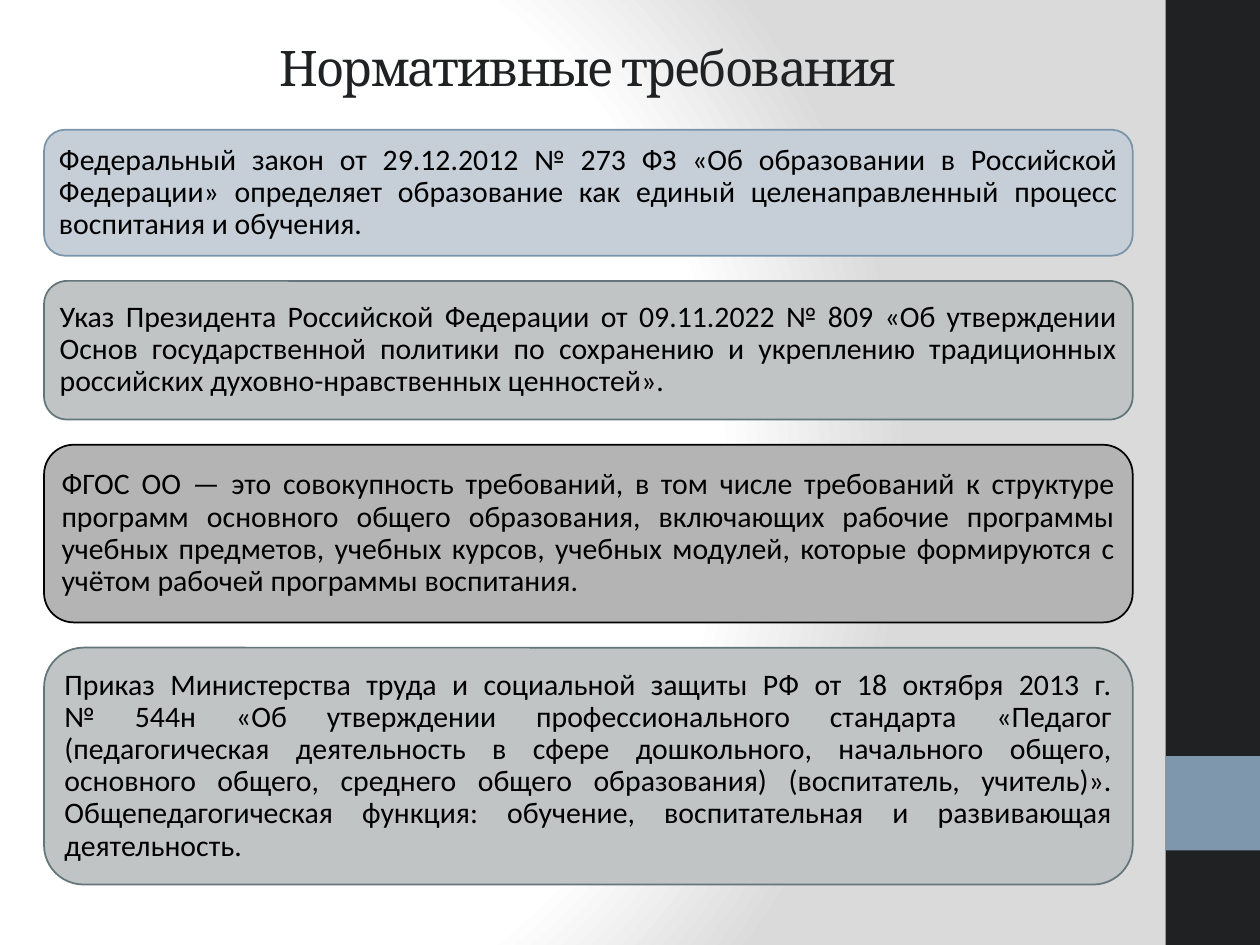
from dataclasses import dataclass

from lxml import etree
from pptx import Presentation
from pptx.dml.color import RGBColor
from pptx.enum.shapes import MSO_SHAPE
from pptx.enum.text import MSO_ANCHOR, PP_ALIGN
from pptx.oxml.ns import qn
from pptx.util import Inches, Pt

RECT, ROUND = MSO_SHAPE.RECTANGLE, MSO_SHAPE.ROUNDED_RECTANGLE
MIDDLE = MSO_ANCHOR.MIDDLE
CENTER, JUSTIFY = PP_ALIGN.CENTER, PP_ALIGN.JUSTIFY


@dataclass(frozen=True)
class Theme:
    dark: str = "1F2123"
    accent: str = "7E97AD"
    black: str = "000000"
    blue: tuple = ("C6CED7", "7A94AA")
    green: tuple = ("C0C4C5", "647679")
    gray: tuple = ("B4B4B4", "000000")
    glow: tuple = ((0, "FFFFFF"), (75, "FFFFFF"), (100, "DADADA"))
    head: str = "Cambria"
    body: str = "Calibri"
    head_size: int = 28
    body_size: int = 17


THEME = Theme()

RULES = [
    (1, THEME.blue,
     "Федеральный закон от 29.12.2012 № 273 ФЗ «Об образовании в Российской "
     "Федерации» определяет образование как единый целенаправленный процесс "
     "воспитания и обучения."),
    (1.1, THEME.green,
     "Указ Президента Российской Федерации от 09.11.2022 № 809 «Об утверждении "
     "Основ государственной политики по сохранению и укреплению традиционных "
     "российских духовно-нравственных ценностей»."),
    (1.41, THEME.gray,
     "ФГОС ОО — это совокупность требований, в том числе требований к структуре "
     "программ основного общего образования, включающих рабочие программы "
     "учебных предметов, учебных курсов, учебных модулей, которые формируются с "
     "учётом рабочей программы воспитания."),
    (1.88, THEME.green,
     "Приказ Министерства труда и социальной защиты РФ от 18 октября 2013 г.\v"
     "№ 544н «Об утверждении профессионального стандарта «Педагог "
     "(педагогическая деятельность в сфере дошкольного, начального общего, "
     "основного общего, среднего общего образования) (воспитатель, учитель)». "
     "Общепедагогическая функция: обучение, воспитательная и развивающая "
     "деятельность."),
]


def write(shape, text, *, font, size, color, align, inset, lead=1, track=0):
    """Fill a shape with one paragraph; track is letter spacing in points."""
    frame = shape.text_frame
    frame.word_wrap = True
    frame.vertical_anchor = MIDDLE
    frame.margin_left = frame.margin_right = Inches(inset)
    frame.margin_top = frame.margin_bottom = Inches(inset)
    para = frame.paragraphs[0]
    para.text = text
    para.alignment = align
    para.line_spacing = lead
    for run in para.runs:
        run.font.name = font
        run.font.size = Pt(size)
        run.font.color.rgb = RGBColor.from_string(color)
        if track:
            run.font._element.set("spc", str(track * 100))


def add_box(slide, kind, box, fill, line=None):
    shape = slide.shapes.add_shape(kind, *map(Inches, box))
    shape.shadow.inherit = False
    shape.fill.solid()
    shape.fill.fore_color.rgb = RGBColor.from_string(fill)
    if line:
        shape.line.color.rgb = RGBColor.from_string(line)
        shape.line.width = Pt(1)
    else:
        shape.line.fill.background()
    return shape


def add_glow(slide):
    """Give the background a radial gradient."""
    slide.background.fill.gradient()
    grad = slide.element.find(".//" + qn("a:gradFill"))
    for child in list(grad):
        grad.remove(child)
    stops = etree.SubElement(grad, qn("a:gsLst"))
    for pos, color in THEME.glow:
        stop = etree.SubElement(stops, qn("a:gs"), pos=str(pos * 1000))
        etree.SubElement(stop, qn("a:srgbClr"), val=color)
    ring = etree.SubElement(grad, qn("a:path"), path="circle")
    etree.SubElement(ring, qn("a:fillToRect"),
                     l="20000", t="50000", r="100000", b="50000")


def add_side(slide, box):
    left, top, width, height = box
    add_box(slide, RECT, box, THEME.dark)
    add_box(slide, RECT, (left, top + 0.8 * height, width, width), THEME.accent)


def add_title(slide, box, text):
    shape = slide.shapes.add_textbox(*map(Inches, box))
    write(shape, text, font=THEME.head, size=THEME.head_size,
          color=THEME.dark, align=CENTER, inset=0, track=-1)


def add_rules(slide, box, rules):
    """Stack the rule cards in the box with equal gaps."""
    left, top, width, height = box
    gap = (height - sum(rule[0] for rule in rules)) / (len(rules) - 1)
    for tall, (fill, line), text in rules:
        card = add_box(slide, ROUND, (left, top, width, tall), fill, line)
        write(card, text, font=THEME.body, size=THEME.body_size,
              color=THEME.black, align=JUSTIFY, inset=0.07, lead=0.9)
        top += tall + gap


def main():
    deck = Presentation()
    deck.slide_width, deck.slide_height = Inches(10), Inches(7.5)
    slide = deck.slides.add_slide(deck.slide_layouts[6])
    add_glow(slide)
    add_side(slide, (9.25, 0, 0.75, 7.5))
    add_title(slide, (0.5, 0.3, 8.33, 0.46), "Нормативные требования")
    add_rules(slide, (0.35, 1.03, 8.64, 5.99), RULES)
    deck.save("out.pptx")


if __name__ == "__main__":
    main()
